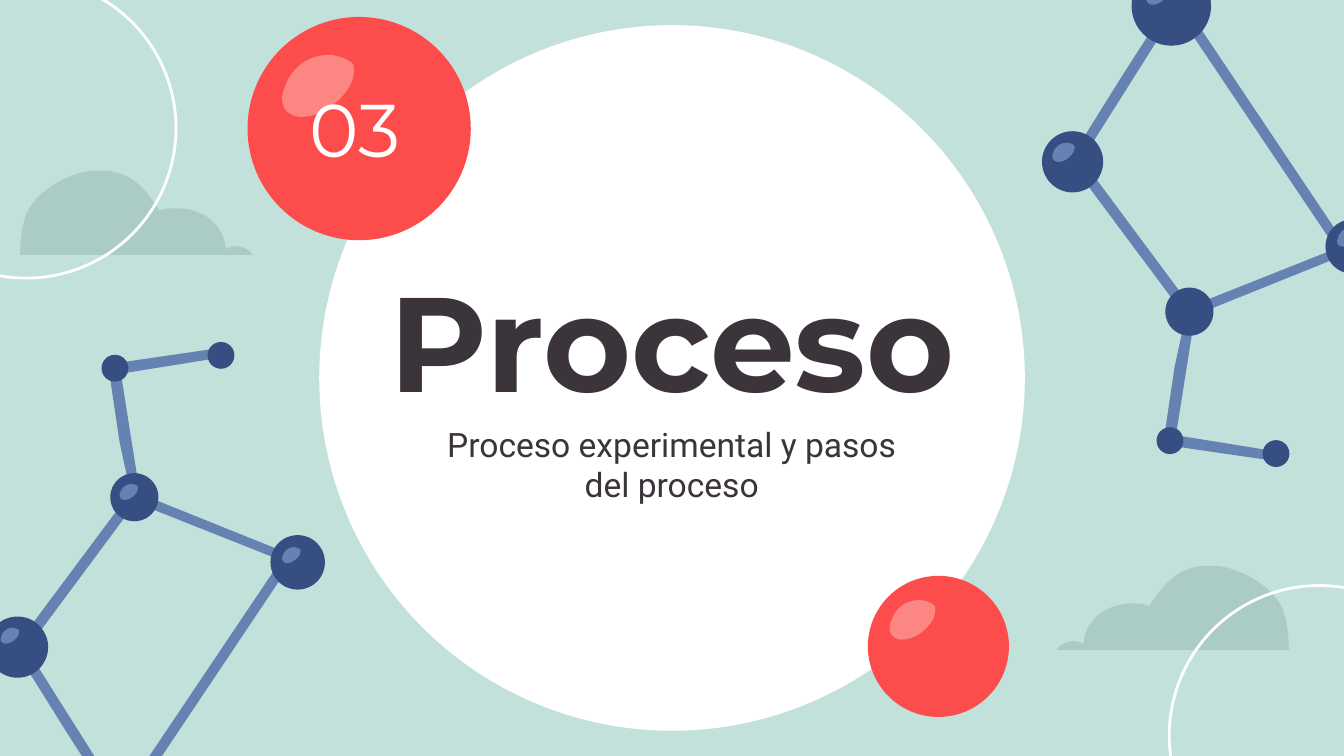
from pptx import Presentation
from pptx.dml.color import RGBColor
from pptx.enum.shapes import MSO_SHAPE
from pptx.enum.text import MSO_ANCHOR, PP_ALIGN
from pptx.util import Pt

ELLIPSE = MSO_SHAPE.OVAL
TOP, MIDDLE = MSO_ANCHOR.TOP, MSO_ANCHOR.MIDDLE
LEFT, CENTER = PP_ALIGN.LEFT, PP_ALIGN.CENTER

WIDTH, HEIGHT = 720, 405
COLORS = {
    "mint": "C2E1DA", "cloud": "AACCC4", "white": "FFFFFF", "ink": "3B343B",
    "bond": "6582B2", "atom": "364E82", "red": "FC4C4C", "pink": "FC8782",
}

# Texts: wording, (left, top, width, height), font, size, bold, colour, align, anchor, inset
TEXTS = [
    ("Proceso", (196.2, 136.3, 327.6, 90), "Montserrat", 72, True, "ink", CENTER, MIDDLE, 7.2),
    ("Proceso experimental y pasos del proceso", (224.2, 219.9, 271.4, 58.3),
     "Roboto", 18, False, "ink", CENTER, TOP, 7.2),
    ("03", (158.8, 41, 67, 55.4), "Montserrat", 40, False, "white", LEFT, TOP, 3.6),
]

# Outlines: a start point, then Bézier curves (two controls and an end)
CLOUD_START = (53.3, 91.4)
CLOUD_CURVES = [
    ((48.2, 91.4), (43.2, 92.2), (38.2, 94.3)),
    ((28.8, 97.9), (20.9, 103.7), (16.6, 110.2)),
    ((12.2, 115.9), (10.8, 128.2), (10.8, 136.5)),
    ((10.8, 136.5), (135.4, 136.5), (135.4, 136.5)),
    ((133.9, 133.9), (129.6, 131.8), (126, 131.8)),
    ((124.6, 131.8), (122.4, 132.5), (121, 133.2)),
    ((120.2, 126), (116.6, 119.5), (109.4, 115.2)),
    ((105.1, 113), (100.1, 111.6), (94.3, 111.6)),
    ((91.4, 111.6), (88.6, 111.6), (85.7, 113)),
    ((82.8, 108.7), (79.9, 104.4), (76.3, 100.8)),
    ((72, 96.5), (67.7, 93.6), (61.2, 92.2)),
    ((59, 91.4), (56.2, 91.4), (53.3, 91.4)),
]
GLINT_WIDTH = 55
GLINT_START = (37, 1)
GLINT_CURVES = [
    ((32, 1), (28, 1), (23, 3)),
    ((13, 6), (5, 15), (2, 25)),
    ((0, 30), (-1, 34), (1, 39)),
    ((3, 44), (8, 47), (14, 47)),
    ((21, 47), (27, 45), (32, 42)),
    ((44, 35), (56, 22), (53, 8)),
    ((49, 4), (43, 2), (37, 1)),
]

# Molecule: atoms as centre and radius; bonds as a bent chain and a ring with a hole
ATOMS = [(62.3, 430.2, 21.3), (9.4, 346.7, 16.4), (72, 266.4, 12.9),
         (159.5, 301.3, 14.6), (61.6, 197.3, 7.2), (118.4, 190.4, 7.2)]
CHAIN = [(117.4, 186.5), (58.3, 195.1), (58.3, 198), (64.1, 236.9),
         (69.1, 259.9), (73.8, 257), (64.8, 200.2), (118.8, 191.5)]
RING_EDGE = [(158.4, 298.1), (70.6, 262.8), (9.4, 344.9), (7.9, 347.8),
             (35.3, 391.7), (62.6, 434.2), (64.8, 437.8)]
RING_HOLE = [(150.5, 300.2), (64.8, 427.7), (14.4, 347.8), (72.7, 269.3)]
BONDS = [[CHAIN], [RING_EDGE, RING_HOLE]]

# Each molecule: flipped, glint width, glint corners
MOLECULES = [
    (False, 10.1, [(64.1, 259.2), (0.4, 336.2), (151.2, 293)]),
    (True, 12.2, [(614.2, -7.9), (563.8, 76.3), (716.4, 121.7)]),
]

# Circles: centre and radius; balls add glint left, top, width
HALOS = [(14, 68.7, 80.3), (706.7, 394, 80.3)]
DISC = (360, 202.5, 189)
BALLS = [((192.4, 68.9, 59.8), (151.2, 28.8, 39.6)),
         ((502.7, 346.3, 37.8), (476.6, 321.1, 25.2))]


def color(name):
    return RGBColor.from_string(COLORS[name])


def add_circle(page, circle, fill=None, line=None):
    x, y, radius = circle
    shape = page.shapes.add_shape(
        ELLIPSE, Pt(x - radius), Pt(y - radius), Pt(2 * radius), Pt(2 * radius))
    shape.shadow.inherit = False
    if fill:
        shape.fill.solid()
        shape.fill.fore_color.rgb = color(fill)
    else:
        shape.fill.background()
    if line:
        shape.line.color.rgb = color(line)
        shape.line.width = Pt(1.5)
    else:
        shape.line.fill.background()


def trace(start, curves, steps=8):
    """Turn Bézier curves into a list of points."""
    points = [start]
    for first, second, end in curves:
        begin = points[-1]
        for step in range(1, steps + 1):
            t = step / steps
            points.append(tuple(
                a * (1 - t) ** 3 + 3 * b * t * (1 - t) ** 2 + 3 * c * t ** 2 * (1 - t) + d * t ** 3
                for a, b, c, d in zip(begin, first, second, end)))
    return points


def add_outline(page, contours, fill):
    rings = [[(Pt(x), Pt(y)) for x, y in contour] for contour in contours]
    builder = page.shapes.build_freeform(*rings[0][0])
    for index, corners in enumerate(rings):
        if index:
            builder.move_to(*corners[0])
        builder.add_line_segments(corners[1:], close=True)
    shape = builder.convert_to_shape()
    shape.shadow.inherit = False
    shape.fill.solid()
    shape.fill.fore_color.rgb = color(fill)
    shape.line.fill.background()


def add_glint(page, left, top, width, fill):
    scale = width / GLINT_WIDTH
    points = trace(GLINT_START, GLINT_CURVES)
    add_outline(page, [[(left + x * scale, top + y * scale) for x, y in points]], fill)


def add_molecule(page, flipped, glint_width, glints):
    def place(x, y):
        return (x + 565.2, 433.4 - y) if flipped else (x, y)

    for bond in BONDS:
        add_outline(page, [[place(x, y) for x, y in contour] for contour in bond], "bond")
    for x, y, radius in ATOMS:
        x, y = place(x, y)
        if y - radius < HEIGHT:
            add_circle(page, (x, y, radius), fill="atom")
    for left, top in glints:
        add_glint(page, left, top, glint_width, "bond")


def add_text(page, words, place, font, size, bold, ink, align, anchor, inset):
    box = page.shapes.add_textbox(*[Pt(value) for value in place])
    frame = box.text_frame
    frame.word_wrap = True
    frame.vertical_anchor = anchor
    frame.margin_left = frame.margin_right = Pt(7.2)
    frame.margin_top = frame.margin_bottom = Pt(inset)
    para = frame.paragraphs[0]
    para.text = words
    para.alignment = align
    para.font.name = font
    para.font.size = Pt(size)
    para.font.bold = bold
    para.font.color.rgb = color(ink)


def main():
    deck = Presentation()
    deck.slide_width, deck.slide_height = Pt(WIDTH), Pt(HEIGHT)
    page = deck.slides.add_slide(deck.slide_layouts[6])
    page.background.fill.solid()
    page.background.fill.fore_color.rgb = color("mint")

    # Clouds: the right one is mirrored and lower
    cloud = trace(CLOUD_START, CLOUD_CURVES)
    add_outline(page, [cloud], "cloud")
    add_outline(page, [[(701.3 - x, y + 211.7) for x, y in cloud]], "cloud")

    # Halos and molecules
    for halo in HALOS:
        add_circle(page, halo, line="white")
    for molecule in MOLECULES:
        add_molecule(page, *molecule)

    # Disc, balls and texts
    add_circle(page, DISC, fill="white")
    for ball, glint in BALLS:
        add_circle(page, ball, fill="red")
        add_glint(page, *glint, "pink")
    for text in TEXTS:
        add_text(page, *text)

    deck.save("out.pptx")


if __name__ == "__main__":
    main()
